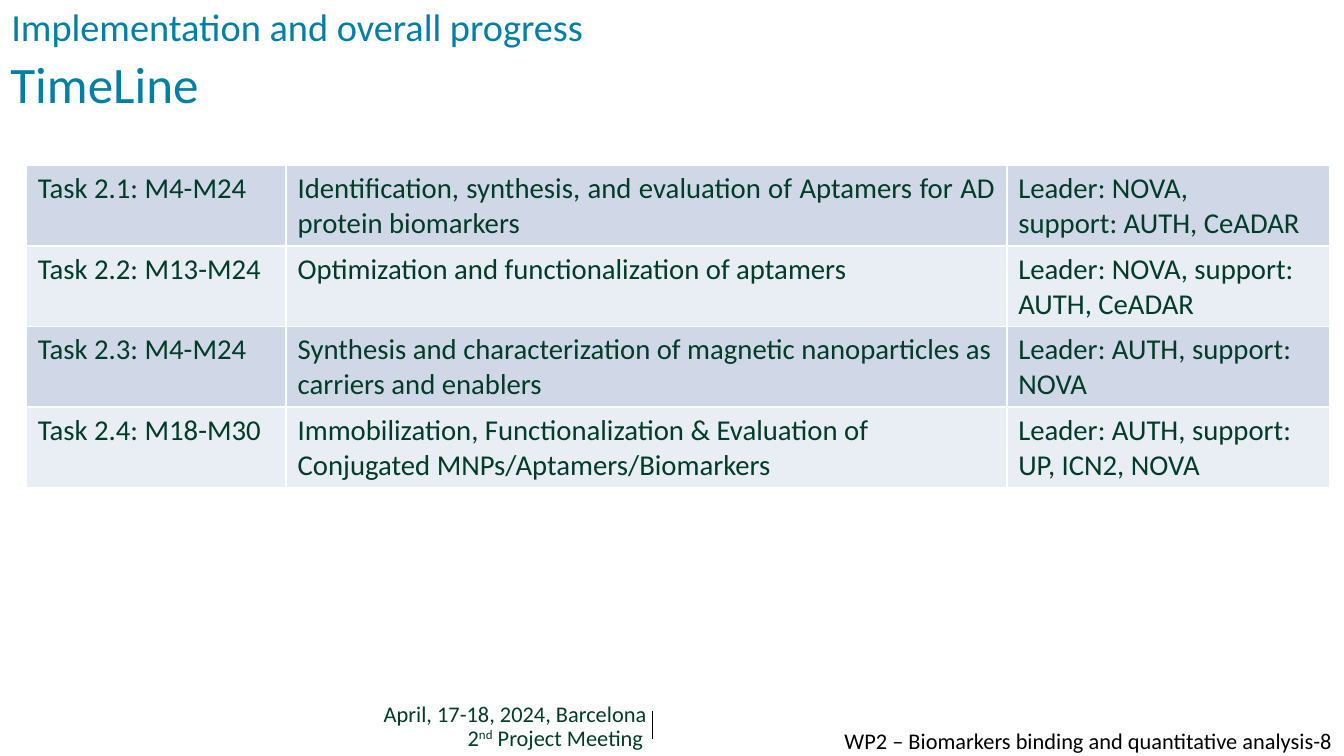
from lxml.etree import SubElement
from pptx import Presentation
from pptx.dml.color import RGBColor
from pptx.enum.shapes import MSO_CONNECTOR
from pptx.enum.text import MSO_ANCHOR, MSO_AUTO_SIZE, PP_ALIGN
from pptx.oxml.ns import qn
from pptx.util import Inches, Pt

# Width of an A4 sheet (297 mm) in a 16:9 format
PAGE_WIDTH = 297 / 25.4
PAGE_HEIGHT = PAGE_WIDTH * 9 / 16
FONT = "Calibri"
COLORS = {
    "heading": "007FA6",
    "body": "003C27",
    "black": "000000",
    "border": "FFFFFF",
    "odd_row": "D0D8E8",
    "even_row": "E9EDF4",
}
COLUMN_WIDTHS = [2.26, 6.27, 2.81]
ROW_HEIGHT = 0.7
# Each cell is a list of paragraphs
TASKS = [
    [["Task 2.1: M4-M24"],
     ["Identification, synthesis, and evaluation of Aptamers for AD protein biomarkers"],
     ["Leader: NOVA,", "support: AUTH, CeADAR"]],
    [["Task 2.2: M13-M24"],
     ["Optimization and functionalization of aptamers"],
     ["Leader: NOVA, support: AUTH, CeADAR"]],
    [["Task 2.3: M4-M24"],
     ["Synthesis and characterization of magnetic nanoparticles as carriers and enablers"],
     ["Leader: AUTH, support: NOVA"]],
    [["Task 2.4: M18-M30"],
     ["Immobilization, Functionalization & Evaluation of Conjugated MNPs/Aptamers/Biomarkers"],
     ["Leader: AUTH, support: UP, ICN2, NOVA"]],
]


def color(name):
    return RGBColor.from_string(COLORS[name])


def set_page_size(deck):
    deck.slide_width = Inches(PAGE_WIDTH)
    deck.slide_height = Inches(PAGE_HEIGHT)
    # The default deck is labelled 4:3
    deck.element.find(qn("p:sldSz")).attrib.pop("type", None)


def add_span(para, text, size, color_name, superscript=False):
    span = para.add_run()
    span.text = text
    span.font.name = FONT
    span.font.size = Pt(size)
    span.font.color.rgb = color(color_name)
    if superscript:
        span.font._element.set("baseline", "30000")


def add_title(page, text, left, top, width, height):
    title = page.shapes.title
    title.left, title.top = Inches(left), Inches(top)
    title.width, title.height = Inches(width), Inches(height)
    frame = title.text_frame
    frame.auto_size = MSO_AUTO_SIZE.NONE
    frame.vertical_anchor = MSO_ANCHOR.MIDDLE
    frame.margin_left = frame.margin_right = Inches(0.09)
    frame.margin_top = frame.margin_bottom = Inches(0.04)
    para = frame.paragraphs[0]
    para.alignment = PP_ALIGN.LEFT
    add_span(para, text, 32, "heading")


def add_text(page, spans, left, top, width, height, size, color_name,
             alignment=PP_ALIGN.LEFT):
    """Add one paragraph; spans are (text, superscript) pairs."""
    box = page.shapes.add_textbox(Inches(left), Inches(top), Inches(width), Inches(height))
    box.text_frame.word_wrap = True
    para = box.text_frame.paragraphs[0]
    para.alignment = alignment
    for text, superscript in spans:
        add_span(para, text, size, color_name, superscript)


def add_divider(page, x, top, bottom):
    line = page.shapes.add_connector(
        MSO_CONNECTOR.STRAIGHT, Inches(x), Inches(top), Inches(x), Inches(bottom))
    line.line.color.rgb = color("black")
    line.line.width = Pt(0.75)
    SubElement(line._element.spPr, qn("a:effectLst"))


def set_borders(cell):
    properties = cell._tc.get_or_add_tcPr()
    for side in ("lnL", "lnR", "lnT", "lnB"):
        border = SubElement(properties, qn(f"a:{side}"), w=str(Pt(1)))
        fill = SubElement(border, qn("a:solidFill"))
        SubElement(fill, qn("a:srgbClr"), val=COLORS["border"])


def fill_cell(cell, lines, fill_name, alignment):
    set_borders(cell)
    cell.fill.solid()
    cell.fill.fore_color.rgb = color(fill_name)
    frame = cell.text_frame
    for index, line in enumerate(lines):
        para = frame.add_paragraph() if index else frame.paragraphs[0]
        para.alignment = alignment
        add_span(para, line, 18, "body")


def add_task_table(page, left, top):
    table = page.shapes.add_table(
        len(TASKS), len(COLUMN_WIDTHS), Inches(left), Inches(top),
        Inches(sum(COLUMN_WIDTHS)), Inches(ROW_HEIGHT * len(TASKS))).table
    table.first_row = False
    table.horz_banding = False
    for column, width in zip(table.columns, COLUMN_WIDTHS):
        column.width = Inches(width)
    for row, task in enumerate(TASKS):
        table.rows[row].height = Inches(ROW_HEIGHT)
        fill_name = "even_row" if row % 2 else "odd_row"
        for column, lines in enumerate(task):
            justified = (row, column) == (0, 1)
            alignment = PP_ALIGN.JUSTIFY if justified else PP_ALIGN.LEFT
            fill_cell(table.cell(row, column), lines, fill_name, alignment)


def main():
    deck = Presentation()
    set_page_size(deck)
    page = deck.slides.add_slide(deck.slide_layouts[5])

    # Footer
    add_divider(page, 5.68, 6.19, 6.43)
    add_text(page, [("2", False), ("nd", True), (" Project Meeting", False)],
             3.97, 6.25, 1.82, 0.29, 14, "body")
    add_text(page, [("April, 17-18, 2024, Barcelona", False)],
             3.24, 6.04, 2.58, 0.29, 14, "body")
    add_text(page, [("WP2 – Biomarkers binding and quantitative analysis-8", False)],
             7.01, 6.28, 4.68, 0.34, 14, "black", PP_ALIGN.RIGHT)

    # Headings
    add_title(page, "TimeLine", 0, 0.41, 4.58, 0.63)
    add_text(page, [("Implementation and overall progress", False)],
             0, -0.02, 5.85, 0.5, 24, "heading", PP_ALIGN.JUSTIFY)

    # Task schedule
    add_task_table(page, 0.23, 1.44)

    deck.save("out.pptx")


if __name__ == "__main__":
    main()
